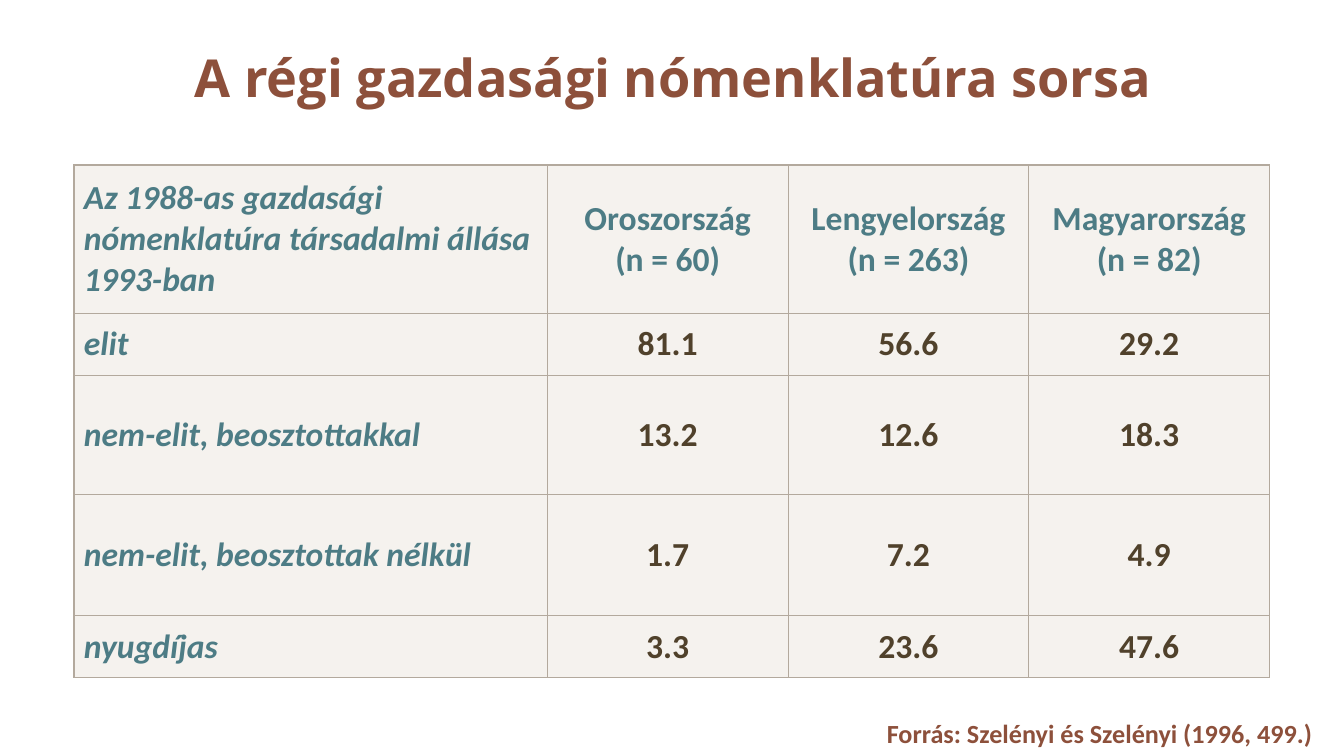
"""Build the slide on the fate of the old economic nomenklatura."""
from lxml import etree
from pptx import Presentation
from pptx import util as u
from pptx.dml.color import RGBColor
from pptx.enum import text
from pptx.oxml import ns

PX = 9525
THEME = {
    "title": {"name": "Open Sans", "size": u.Pt(28), "bold": True, "color": "8D503B"},
    "label": {"name": "Calibri", "size": u.Pt(18), "bold": True, "italic": True, "color": "4D7C85"},
    "country": {"name": "Calibri", "size": u.Pt(18), "bold": True, "italic": False, "color": "4D7C85"},
    "value": {"name": "Calibri", "size": u.Pt(18), "bold": True, "italic": False, "color": "50412B"},
    "source": {"name": "Calibri", "size": u.Pt(14), "bold": True, "color": "8D503B"},
    "cell": "EFEAE4",
    "border": "B3A99D",
}
ROWS = [
    ["Az 1988-as gazdasági nómenklatúra társadalmi állása 1993-ban",
     "Oroszország\n(n = 60)", "Lengyelország\n(n = 263)", "Magyarország\n(n = 82)"],
    ["elit", "81.1", "56.6", "29.2"],
    ["nem-elit, beosztottakkal", "13.2", "12.6", "18.3"],
    ["nem-elit, beosztottak nélkül", "1.7", "7.2", "4.9"],
    ["nyugdíjas", "3.3", "23.6", "47.6"],
]
WIDTHS = [338, 172, 172, 172]
HEIGHTS = [106, 44, 85, 87, 44]


def write(p, words, role, align):
    p.text = words
    p.alignment = align
    for r in p.runs:
        for key, value in THEME[role].items():
            if key == "color":
                r.font.color.rgb = RGBColor.from_string(value)
            else:
                setattr(r.font, key, value)


def style_cell(cell, edges):
    cell.fill.solid()
    cell.fill.fore_color.rgb = RGBColor.from_string(THEME["cell"])
    props = cell._tc.tcPr
    color = props.find(".//" + ns.qn("a:srgbClr"))
    etree.SubElement(color, ns.qn("a:alpha"), val="60000")
    for i, (side, outer) in enumerate(edges.items()):
        ln = etree.Element(ns.qn(f"a:ln{side}"), w=str(u.Pt(1 if outer else 0.5)))
        fill = etree.SubElement(ln, ns.qn("a:solidFill"))
        etree.SubElement(fill, ns.qn("a:srgbClr"), val=THEME["border"])
        props.insert(i, ln)


prs = Presentation()
prs.slide_width, prs.slide_height = 960 * PX, 540 * PX
s = prs.slides.add_slide(prs.slide_layouts[5])

sp = s.shapes.title
sp.left, sp.top, sp.width, sp.height = 12 * PX, 0, 937 * PX, 119 * PX
tf = sp.text_frame
tf.vertical_anchor = text.MSO_ANCHOR.MIDDLE
tf.auto_size = text.MSO_AUTO_SIZE.NONE
write(tf.paragraphs[0], "A régi gazdasági nómenklatúra sorsa", "title", text.PP_ALIGN.CENTER)
tf.paragraphs[0].line_spacing = 0.75

table = s.shapes.add_table(len(ROWS), len(WIDTHS), 53 * PX, 118 * PX,
                           sum(WIDTHS) * PX, sum(HEIGHTS) * PX).table
table.first_row = table.horz_banding = False
for column, width in zip(table.columns, WIDTHS):
    column.width = width * PX
for i, (row, height) in enumerate(zip(ROWS, HEIGHTS)):
    table.rows[i].height = height * PX
    for j, words in enumerate(row):
        cell = table.cell(i, j)
        form = {"margin_left": 7 * PX, "margin_right": 7 * PX, "margin_top": 0,
                "margin_bottom": 0, "vertical_anchor": text.MSO_ANCHOR.MIDDLE}
        for key, value in form.items():
            setattr(cell, key, value)
        role = "label" if j == 0 else "country" if i == 0 else "value"
        align = text.PP_ALIGN.LEFT if j == 0 else text.PP_ALIGN.CENTER
        write(cell.text_frame.paragraphs[0], words, role, align)
        style_cell(cell, {"L": j == 0, "R": j == len(WIDTHS) - 1,
                          "T": i == 0, "B": i == len(ROWS) - 1})

sp = s.shapes.add_textbox(624 * PX, 508 * PX, 336 * PX, 32 * PX)
tf = sp.text_frame
tf.word_wrap = True
tf.auto_size = text.MSO_AUTO_SIZE.SHAPE_TO_FIT_TEXT
write(tf.paragraphs[0], "Forrás: Szelényi és Szelényi (1996, 499.)", "source", text.PP_ALIGN.LEFT)

prs.save("out.pptx")
